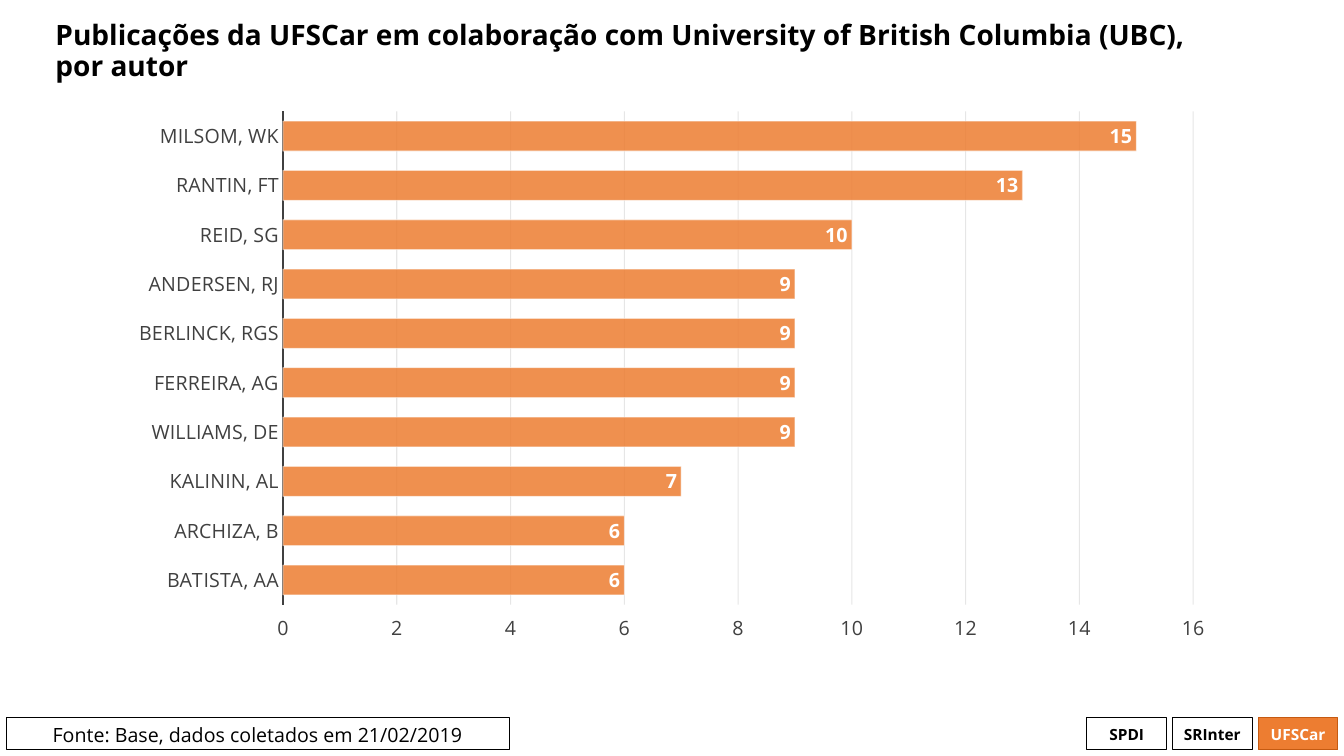
from lxml import etree
from pptx import Presentation
from pptx.chart.data import CategoryChartData
from pptx.dml.color import RGBColor
from pptx.enum.chart import (XL_CHART_TYPE, XL_LABEL_POSITION,
                             XL_TICK_LABEL_POSITION, XL_TICK_MARK)
from pptx.enum.shapes import MSO_SHAPE
from pptx.enum.text import MSO_ANCHOR, MSO_AUTO_SIZE, PP_ALIGN
from pptx.oxml import parse_xml
from pptx.oxml.ns import nsdecls, qn
from pptx.util import Inches, Pt

BARS = XL_CHART_TYPE.BAR_CLUSTERED
INSIDE_END = XL_LABEL_POSITION.INSIDE_END
HIGH_END = XL_TICK_LABEL_POSITION.HIGH
NO_TICK = XL_TICK_MARK.NONE
RECTANGLE = MSO_SHAPE.RECTANGLE
LEFT, CENTER = PP_ALIGN.LEFT, PP_ALIGN.CENTER
TOP, MIDDLE = MSO_ANCHOR.TOP, MSO_ANCHOR.MIDDLE
NO_AUTOFIT = MSO_AUTO_SIZE.NONE

BLACK, WHITE, GREY = "000000", "FFFFFF", "404040"
ORANGE, DARK_ORANGE, GRID = "ED7D31", "C55A11", "0D0D0D"

PUBLICATIONS = {
    "MILSOM, WK": 15, "RANTIN, FT": 13, "REID, SG": 10, "ANDERSEN, RJ": 9,
    "BERLINCK, RGS": 9, "FERREIRA, AG": 9, "WILLIAMS, DE": 9,
    "KALININ, AL": 7, "ARCHIZA, B": 6, "BATISTA, AA": 6,
}


def rgb(value):
    return RGBColor.from_string(value)


def set_opacity(owner, path, percent):
    for color in owner.xpath(path):
        etree.SubElement(color, qn("a:alpha")).set("val", str(percent * 1000))


class SlideBuilder:
    font_name = "Open Sans"

    def __init__(self, slide):
        self.slide = slide

    def style_font(self, font, size, color, bold=False):
        font.name, font.size, font.bold = self.font_name, Pt(size), bold
        font.color.rgb = rgb(color)

    def style_line(self, line, color, width=0.75):
        line.color.rgb = rgb(color)
        line.width = Pt(width)

    def add_run(self, paragraph, text, size, color, bold):
        run = paragraph.add_run()
        run.text = text
        self.style_font(run.font, size, color, bold)

    def title(self, lines, left, top, width, height):
        heading = self.slide.shapes.title
        heading.left, heading.top = Inches(left), Inches(top)
        heading.width, heading.height = Inches(width), Inches(height)
        frame = heading.text_frame
        frame.word_wrap, frame.auto_size = True, NO_AUTOFIT
        frame.vertical_anchor = MIDDLE
        paragraph = frame.paragraphs[0]
        paragraph.alignment, paragraph.line_spacing = LEFT, 0.9
        for index, line in enumerate(lines):
            if index:
                paragraph.add_line_break()
            self.add_run(paragraph, line, 20, BLACK, True)

    def box(self, text, left, width, size, color=BLACK, fill=None,
            border=BLACK, bold=False, anchor=MIDDLE):
        box = self.slide.shapes.add_shape(
            RECTANGLE, Inches(left), Inches(7.12), Inches(width), Inches(0.32))
        box.shadow.inherit = False
        if fill:
            box.fill.solid()
            box.fill.fore_color.rgb = rgb(fill)
        else:
            box.fill.background()
        self.style_line(box.line, border)
        frame = box.text_frame
        frame.word_wrap, frame.vertical_anchor = True, anchor
        paragraph = frame.paragraphs[0]
        paragraph.alignment = CENTER
        self.add_run(paragraph, text, size, color, bold)

    def bar_chart(self, values, left, top, width, height):
        data = CategoryChartData()
        data.categories = list(values)
        data.add_series("Series 1", list(values.values()))
        chart = self.slide.shapes.add_chart(
            BARS, Inches(left), Inches(top), Inches(width), Inches(height),
            data).chart
        chart.has_legend = chart.has_title = False
        self.style_font(chart.font, 14, BLACK)
        self.style_axes(chart.category_axis, chart.value_axis)
        self.style_bars(chart.plots[0])
        self.frame_chart(chart._chartSpace)

    def style_axes(self, authors, counts):
        for axis in (authors, counts):
            axis.major_tick_mark = axis.minor_tick_mark = NO_TICK
            self.style_font(axis.tick_labels.font, 14, GREY)
        # Authors run downwards, so the high end is the bottom
        authors.reverse_order = True
        counts.tick_label_position = HIGH_END
        self.style_line(authors.format.line, GREY, 1.5)
        counts.minimum_scale, counts.maximum_scale = 0, 16
        counts.major_unit = 2
        counts.format.line.fill.background()
        counts.has_major_gridlines = True
        self.style_line(counts.major_gridlines.format.line, GRID)
        set_opacity(counts._element, "c:majorGridlines//a:srgbClr", 10)

    def style_bars(self, plot):
        plot.gap_width, plot.vary_by_categories = 65, False
        bars = plot.series[0]
        bars.format.fill.solid()
        bars.format.fill.fore_color.rgb = rgb(ORANGE)
        self.style_line(bars.format.line, WHITE)
        set_opacity(bars._element, "c:spPr/a:solidFill/a:srgbClr", 85)
        set_opacity(bars._element, "c:spPr/a:ln//a:srgbClr", 50)
        labels = bars.data_labels
        labels.show_value, labels.position = True, INSIDE_END
        self.style_font(labels.font, 14, WHITE, True)

    def frame_chart(self, chart_space):
        # Fixed plot area, as fractions of the chart
        area = chart_space.xpath("c:chart/c:plotArea")[0]
        for layout in area.xpath("c:layout"):
            area.remove(layout)
        sizes = {"x": 0.15, "y": 0.02, "w": 0.82, "h": 0.89}
        parts = '<c:layoutTarget val="inner"/>'
        parts += "".join(f'<c:{key}Mode val="edge"/>' for key in "xy")
        parts += "".join(f'<c:{key} val="{size}"/>'
                         for key, size in sizes.items())
        area.insert(0, parse_xml(
            f'<c:layout {nsdecls("c")}><c:manualLayout>{parts}'
            '</c:manualLayout></c:layout>'))
        # White background and border
        white = f'<a:solidFill><a:srgbClr val="{WHITE}"/></a:solidFill>'
        chart_space.xpath("c:chart")[0].addnext(parse_xml(
            f'<c:spPr {nsdecls("c", "a")}>{white}'
            f'<a:ln w="{Pt(0.75)}">{white}</a:ln></c:spPr>'))


def main():
    presentation = Presentation()
    presentation.slide_width = Inches(13.33)
    presentation.slide_height = Inches(7.5)
    title_only = presentation.slide_layouts[5]
    builder = SlideBuilder(presentation.slides.add_slide(title_only))

    # Footer: unit badges and data source
    badges = [("SPDI", {}), ("SRInter", {}),
              ("UFSCar", {"color": WHITE, "fill": ORANGE,
                          "border": DARK_ORANGE})]
    for index, (unit, colors) in enumerate(badges):
        builder.box(unit, 10.78 + 0.85 * index, 0.79, 11, bold=True, **colors)
    builder.box("Fonte: Base, dados coletados em 21/02/2019", 0.06, 4.99, 14,
                anchor=TOP)

    # Title
    builder.title(["Publicações da UFSCar em colaboração com University of "
                   "British Columbia (UBC),", "por autor"],
                  0.45, 0.06, 12.41, 0.91)

    # Publications by author
    builder.bar_chart(PUBLICATIONS, 1.15, 0.99, 11.02, 5.51)

    presentation.save("out.pptx")


if __name__ == "__main__":
    main()
